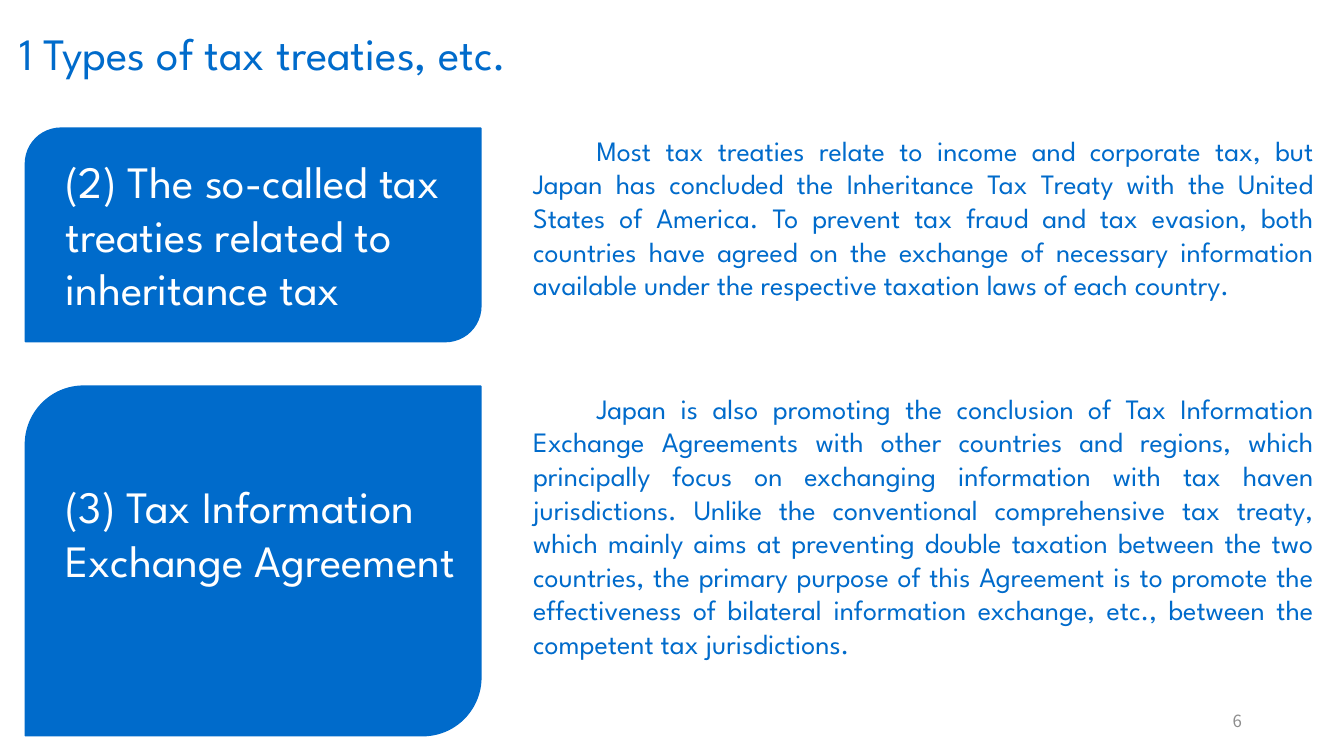
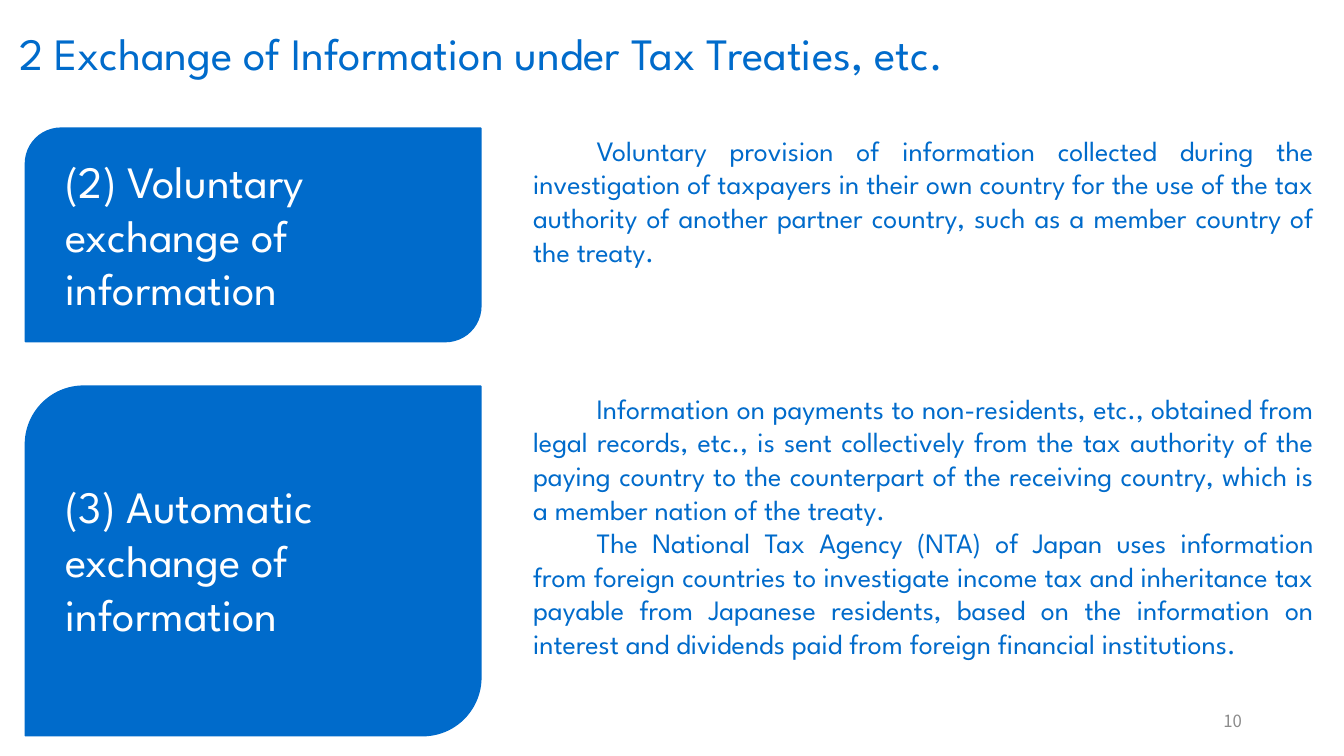
from lxml.etree import SubElement
from pptx import Presentation
from pptx.dml.color import RGBColor
from pptx.enum.shapes import MSO_SHAPE
from pptx.enum.text import MSO_ANCHOR, MSO_AUTO_SIZE, PP_ALIGN
from pptx.oxml.ns import qn
from pptx.util import Cm, Pt

BLUE = RGBColor(0x00, 0x6B, 0xCB)
WHITE = RGBColor(0xFF, 0xFF, 0xFF)
GREY = RGBColor(0x8C, 0x8C, 0x8C)
FONT = "League Spartan"
NUMBER_FONT = "Noto Sans CJK JP"

TITLE = {"left": Cm(0.23), "top": Cm(0.51), "width": Cm(32.5), "height": Cm(1.63)}
BODY = {"left": Cm(13.18), "width": Cm(20.19)}
# top, height and heading offset of each row, in cm
ROWS = [(3.23, 5.38, 0.64), (9.73, 8.81, 2.34)]
CORNER_INSET = 0.0488  # share of a card's height that its round corners take from the text area

SLIDES = [
    {
        "title": "1 Types of tax treaties, etc.",
        "number": "6",
        "rows": [
            ("(2) The so-called tax treaties related to inheritance tax", [
                "Most tax treaties relate to income and corporate tax, but Japan has concluded "
                "the Inheritance Tax Treaty with the United States of America. To prevent tax "
                "fraud and tax evasion, both countries have agreed on the exchange of necessary "
                "information available under the respective taxation laws of each country.",
            ]),
            ("(3) Tax Information Exchange Agreement", [
                "Japan is also promoting the conclusion of Tax Information Exchange Agreements "
                "with other countries and regions, which principally focus on exchanging "
                "information with tax haven jurisdictions. Unlike the conventional comprehensive "
                "tax treaty, which mainly aims at preventing double taxation between the two "
                "countries, the primary purpose of this Agreement is to promote the effectiveness "
                "of bilateral information exchange, etc., between the competent tax jurisdictions.",
            ]),
        ],
    },
    {
        "title": "2 Exchange of Information under Tax Treaties, etc.",
        "number": "10",
        "rows": [
            ("(2) Voluntary exchange of information", [
                "Voluntary provision of information collected during the investigation of "
                "taxpayers in their own country for the use of the tax authority of another "
                "partner country, such as a member country of the treaty.",
            ]),
            ("(3) Automatic exchange of information", [
                "Information on payments to non-residents, etc., obtained from legal records, "
                "etc., is sent collectively from the tax authority of the paying country to the "
                "counterpart of the receiving country, which is a member nation of the treaty.",
                "The National Tax Agency (NTA) of Japan uses information from foreign countries "
                "to investigate income tax and inheritance tax payable from Japanese residents, "
                "based on the information on interest and dividends paid from foreign financial "
                "institutions.",
            ]),
        ],
    },
]


def set_attrs(obj, values):
    for name, value in values.items():
        setattr(obj, name, value)


def write(p, text, size, color, align=PP_ALIGN.LEFT, font=FONT):
    p.alignment = align
    r = p.add_run()
    r.text = text
    set_attrs(r.font, {"name": font, "size": Pt(size)})
    r.font.color.rgb = color


prs = Presentation()
prs.slide_width, prs.slide_height = Cm(33.87), Cm(19.05)
layout = prs.slide_layouts.get_by_name("Two Content")

# Shared positions live on the layout, so every slide inherits them
title, *bodies = list(layout.placeholders)[:3]
set_attrs(title, TITLE)
for body, (top, height, _) in zip(bodies, ROWS):
    set_attrs(body, {**BODY, "top": Cm(top), "height": Cm(height)})

for data in SLIDES:
    s = prs.slides.add_slide(layout)
    s.shapes.title.text_frame.auto_size = MSO_AUTO_SIZE.NONE
    write(s.shapes.title.text_frame.paragraphs[0], data["title"], 32, BLUE)

    for idx, ((top, height, offset), (heading, paragraphs)) in enumerate(zip(ROWS, data["rows"]), 1):
        card = s.shapes.add_shape(MSO_SHAPE.ROUND_2_DIAG_RECTANGLE,
                                  Cm(0.64), Cm(top), Cm(11.48), Cm(height))
        card.shadow.inherit = False
        card.fill.solid()
        card.fill.fore_color.rgb = BLUE
        card.line.color.rgb = BLUE
        card.line.width = Pt(1)
        inset = CORNER_INSET * height
        set_attrs(card.text_frame, {
            "word_wrap": True,
            "vertical_anchor": MSO_ANCHOR.TOP,
            "margin_left": Cm(1.01 - inset),
            "margin_top": Cm(offset - inset),
            "margin_right": 0,
            "margin_bottom": 0,
        })
        write(card.text_frame.paragraphs[0], heading, 32, WHITE)

        tf = s.placeholders[idx].text_frame
        tf.auto_size = MSO_AUTO_SIZE.NONE
        for i, text in enumerate(paragraphs):
            p = tf.add_paragraph() if i else tf.paragraphs[0]
            write(p, text, 20, BLUE, PP_ALIGN.JUSTIFY)
            p.space_before = Pt(0)
            pPr = p._p.get_or_add_pPr()
            pPr.set("marL", "0")
            pPr.set("indent", str(Cm(1.6)))
            SubElement(pPr, qn("a:buNone"))

    number = s.shapes.add_textbox(Cm(23.93), Cm(17.65), Cm(7.62), Cm(1.02))
    set_attrs(number.text_frame, {"word_wrap": True, "vertical_anchor": MSO_ANCHOR.MIDDLE})
    write(number.text_frame.paragraphs[0], data["number"], 12, GREY, PP_ALIGN.RIGHT, NUMBER_FONT)

prs.save("out.pptx")
